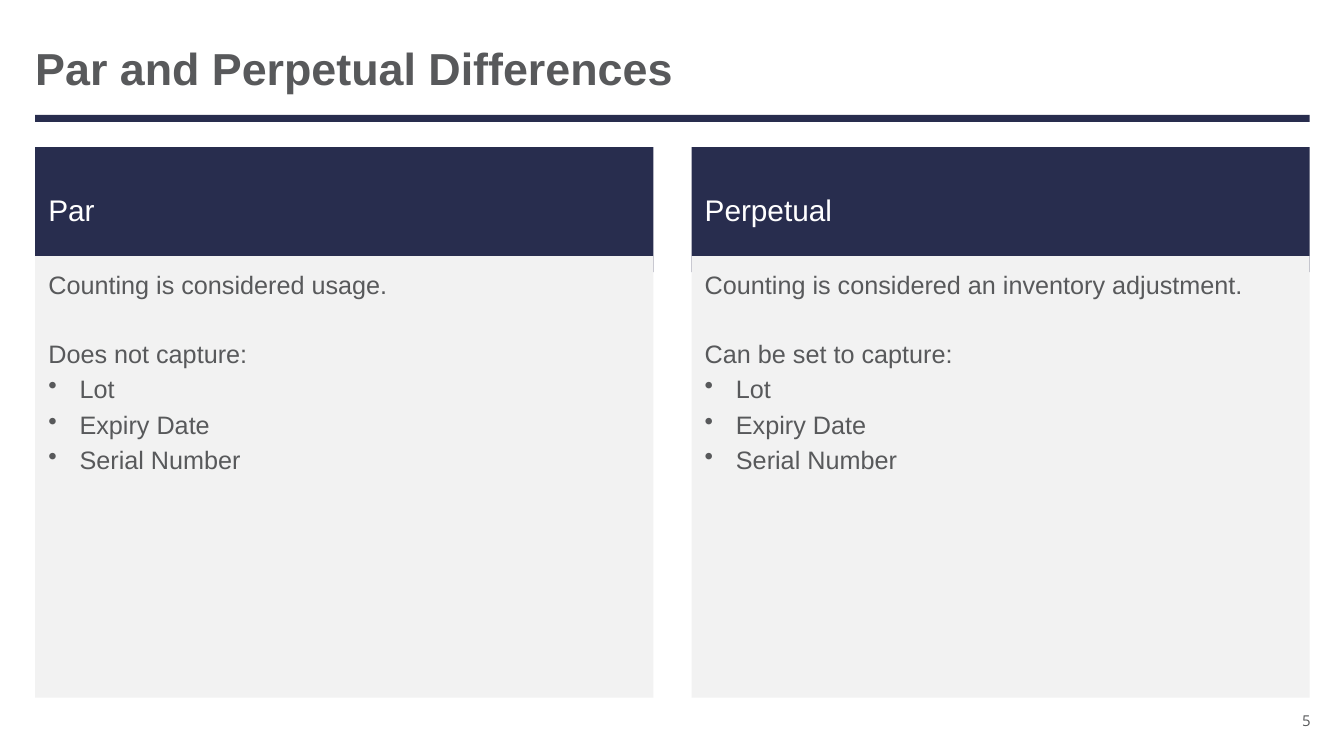
from lxml import etree
from pptx import Presentation
from pptx.dml.color import RGBColor
from pptx.enum.shapes import MSO_SHAPE
from pptx.enum.text import MSO_ANCHOR, PP_ALIGN
from pptx.oxml.ns import qn
from pptx.util import Inches, Pt

RECT = MSO_SHAPE.RECTANGLE
TOP, MIDDLE = MSO_ANCHOR.TOP, MSO_ANCHOR.MIDDLE
LEFT, RIGHT = PP_ALIGN.LEFT, PP_ALIGN.RIGHT

NAVY, PALE, GRAY, WHITE = "282D4E", "F2F2F2", "58595B", "FFFFFF"
MARGIN, CONTENT_W = 0.35, 12.64
COLUMN_W, COLUMN_GAP = 6.13, 0.38
INSET = 0.13
LINE_GAP = 3.6
SECTION_GAP = 27.9

COLUMNS = [
    ("Par", "Counting is considered usage.", "Does not capture:"),
    ("Perpetual", "Counting is considered an inventory adjustment.",
     "Can be set to capture:"),
]
CAPTURED = ["Lot", "Expiry Date", "Serial Number"]


def color(value):
    return RGBColor.from_string(value)


def add_rect(slide, x, y, w, h, fill):
    sp = slide.shapes.add_shape(RECT, Inches(x), Inches(y), Inches(w), Inches(h))
    sp.shadow.inherit = False
    sp.fill.solid()
    sp.fill.fore_color.rgb = color(fill)
    sp.line.fill.background()
    return sp


def add_text_box(slide, x, y, w, h):
    return slide.shapes.add_textbox(Inches(x), Inches(y), Inches(w), Inches(h))


def set_frame(sp, anchor, inset_x, inset_y):
    tf = sp.text_frame
    tf.word_wrap = True
    tf.vertical_anchor = anchor
    tf.margin_left = tf.margin_right = Inches(inset_x)
    tf.margin_top = tf.margin_bottom = Inches(inset_y)
    return tf


def write(p, text, size, fill, font="Arial", align=LEFT, before=0):
    p.text = text
    p.alignment = align
    p.space_before = Pt(before)
    p.font.name = font
    p.font.size = Pt(size)
    p.font.color.rgb = color(fill)


def add_bullet(p, indent=0.31):
    pPr = p._p.get_or_add_pPr()
    pPr.set("marL", str(Inches(indent)))
    pPr.set("indent", str(-Inches(indent)))
    bullet = etree.Element(qn("a:buChar"), char="•")
    pPr.find(qn("a:spcBef")).addnext(bullet)


def add_title(slide, x, y, w):
    """Slide title with the rule below it."""
    add_rect(slide, x, y + 0.73, w, 0.07, NAVY)
    tf = set_frame(add_text_box(slide, x, y, w, 0.61), MIDDLE, 0, 0.05)
    p = tf.paragraphs[0]
    write(p, "Par and Perpetual Differences", 32, GRAY)
    p.font.bold = True
    p.line_spacing = 0.85


def add_column(slide, x, y, w, heading, usage, lead):
    """Heading band with the panel that overlaps its lower edge."""
    band = add_rect(slide, x, y, w, 1.24, NAVY)
    tf = set_frame(band, MIDDLE, INSET, INSET)
    write(tf.paragraphs[0], heading, 21.3, WHITE, before=LINE_GAP)

    panel = add_rect(slide, x, y + 1.08, w, 4.38, PALE)
    tf = set_frame(panel, TOP, INSET, INSET)
    write(tf.paragraphs[0], usage, 18, GRAY, before=LINE_GAP)
    write(tf.add_paragraph(), lead, 18, GRAY, before=SECTION_GAP)
    for item in CAPTURED:
        p = tf.add_paragraph()
        write(p, item, 18, GRAY, before=LINE_GAP)
        add_bullet(p)


def add_page_number(slide, x, y, w, h):
    tf = set_frame(add_text_box(slide, x, y, w, h), MIDDLE, 0, 0)
    write(tf.paragraphs[0], "5", 10.7, GRAY, font="Open Sans", align=RIGHT)


def main():
    prs = Presentation()
    prs.slide_width, prs.slide_height = Inches(13.33), Inches(7.5)
    slide = prs.slides.add_slide(prs.slide_layouts[6])
    add_title(slide, MARGIN, 0.41, CONTENT_W)
    for i, column in enumerate(COLUMNS):
        x = MARGIN + i * (COLUMN_W + COLUMN_GAP)
        add_column(slide, x, 1.46, COLUMN_W, *column)
    add_page_number(slide, 12.5, 6.92, 0.5, 0.46)
    prs.save("out.pptx")


if __name__ == "__main__":
    main()
